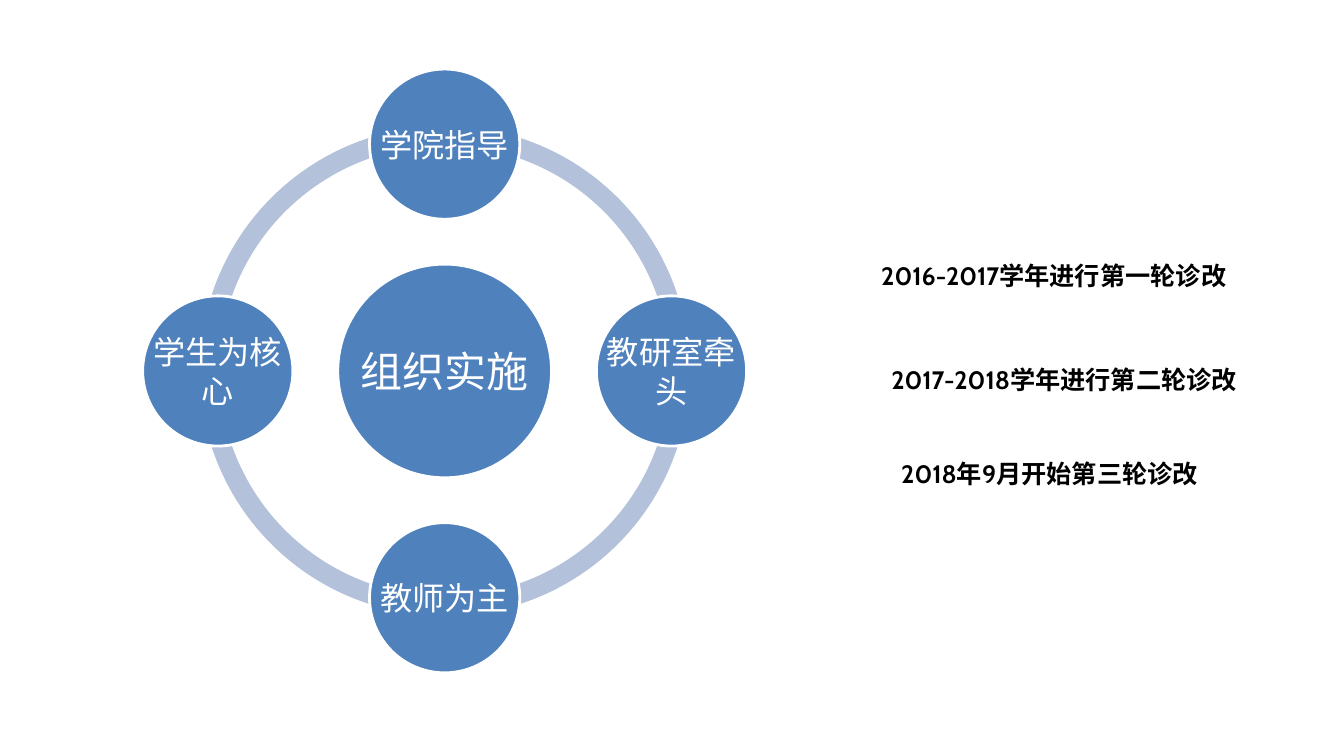
"""Builds a slide with a four-part organisation cycle and three review rounds."""
import math
from dataclasses import dataclass

from lxml import etree
from pptx import Presentation
from pptx.dml.color import RGBColor
from pptx.enum.shapes import MSO_SHAPE
from pptx.enum.text import MSO_ANCHOR, MSO_AUTO_SIZE, PP_ALIGN
from pptx.oxml.ns import qn
from pptx.util import Inches, Pt

ARC, OVAL = MSO_SHAPE.BLOCK_ARC, MSO_SHAPE.OVAL
TOP, MIDDLE = MSO_ANCHOR.TOP, MSO_ANCHOR.MIDDLE
LEFT, CENTER, JUSTIFY = PP_ALIGN.LEFT, PP_ALIGN.CENTER, PP_ALIGN.JUSTIFY
NO_FIT, GROW = MSO_AUTO_SIZE.NONE, MSO_AUTO_SIZE.SHAPE_TO_FIT_TEXT

CENTER_X, CENTER_Y = 4.41, 3.68
RING_SIZE, RING_THICKNESS = 4.86, 0.04
ORBIT_RADIUS = 2.25
HUB_SIZE, NODE_SIZE = 2.12, 1.49
NODES = ["学院指导", "教研室牵头", "教师为主", "学生为核心"]


@dataclass(frozen=True)
class Theme:
    """Colours, fonts and type sizes of the slide."""
    disc: RGBColor = RGBColor(0x4F, 0x81, 0xBD)
    ring: RGBColor = RGBColor(0xB3, 0xC1, 0xDB)
    white: RGBColor = RGBColor(0xFF, 0xFF, 0xFF)
    black: RGBColor = RGBColor(0, 0, 0)
    disc_font: str = "Calibri"
    latin_font: str = "Cabin"
    chinese_font: str = "Noto Sans CJK SC"
    hub_size: int = 30
    node_size: int = 23
    round_size: int = 18
    round_spacing: float = 23.8


def write_text(shape, runs, *, size, color, bold=False, align=LEFT, anchor=TOP,
               inset=(0, 0), spacing=None, fit=NO_FIT):
    """Write (text, font) runs into the shape as one formatted paragraph."""
    frame = shape.text_frame
    frame.word_wrap = True
    frame.auto_size = fit
    frame.vertical_anchor = anchor
    frame.margin_left = frame.margin_right = Inches(inset[0])
    frame.margin_top = frame.margin_bottom = Inches(inset[1])
    paragraph = frame.paragraphs[0]
    paragraph.alignment = align
    if spacing:
        paragraph.line_spacing = Pt(spacing)
    for text, font_name in runs:
        run = paragraph.add_run()
        run.text = text
        run.font.size = Pt(size)
        run.font.bold = bold
        run.font.color.rgb = color
        run.font.name = font_name
        east_asian = etree.Element(qn("a:ea"), typeface=font_name)
        run.font._element.find(qn("a:latin")).addnext(east_asian)


class SlideBuilder:
    """Draws the elements of the current slide in one theme."""

    def __init__(self, slide, theme):
        """Keep the slide and its theme."""
        self.slide = slide
        self.theme = theme

    def centered_shape(self, kind, x, y, size, fill):
        """Add a filled square-framed shape centred on a point."""
        shape = self.slide.shapes.add_shape(
            kind, Inches(x - size / 2), Inches(y - size / 2), Inches(size), Inches(size))
        shape.shadow.inherit = False
        shape.fill.solid()
        shape.fill.fore_color.rgb = fill
        return shape

    def ring_quarter(self, start, end):
        """Add the part of the ring between two angles in degrees."""
        arc = self.centered_shape(ARC, CENTER_X, CENTER_Y, RING_SIZE, self.theme.ring)
        arc.line.fill.background()
        arc.adjustments[0] = start * 0.6
        arc.adjustments[1] = end * 0.6
        arc.adjustments[2] = RING_THICKNESS

    def disc(self, x, y, diameter, text, size, inset):
        """Add a disc with a label that spans its full width."""
        shape = self.centered_shape(OVAL, x, y, diameter, self.theme.disc)
        shape.line.color.rgb = self.theme.white
        shape.line.width = Pt(2)
        label = self.slide.shapes.add_textbox(shape.left, shape.top, shape.width, shape.height)
        write_text(label, [(text, self.theme.disc_font)], size=size, color=self.theme.white,
                   align=CENTER, anchor=MIDDLE, inset=(inset, inset))

    def review_round(self, left, top, width, height, runs, align=LEFT, inset=(0, 0)):
        """Add one bold line about a review round."""
        box = self.slide.shapes.add_textbox(
            Inches(left), Inches(top), Inches(width), Inches(height))
        write_text(box, runs, size=self.theme.round_size, color=self.theme.black, bold=True,
                   align=align, inset=inset, spacing=self.theme.round_spacing, fit=GROW)


def main():
    """Build and save the presentation."""
    presentation = Presentation()
    presentation.slide_width = Inches(13.33)
    presentation.slide_height = Inches(7.5)
    theme = Theme()
    builder = SlideBuilder(
        presentation.slides.add_slide(presentation.slide_layouts[6]), theme)

    for start in (270, 0, 90, 180):
        builder.ring_quarter(start, (start + 90) % 360)

    builder.disc(CENTER_X, CENTER_Y, HUB_SIZE, "组织实施", theme.hub_size, 0.04)
    for index, name in enumerate(NODES):
        angle = math.tau * index / len(NODES)
        builder.disc(CENTER_X + ORBIT_RADIUS * math.sin(angle),
                     CENTER_Y - ORBIT_RADIUS * math.cos(angle),
                     NODE_SIZE, name, theme.node_size, 0.03)

    for left, top, years, text in ((8.74, 2.55, "2016-2017", "学年进行第一轮诊改"),
                                   (8.84, 3.58, "2017-2018", "学年进行第二轮诊改")):
        builder.review_round(left, top, 3.95, 0.33,
                             [(years, theme.latin_font), (text, theme.chinese_font)])
    builder.review_round(8.84, 4.47, 3.49, 0.43,
                         [("2018年9月开始第三轮诊改", theme.latin_font)],
                         align=JUSTIFY, inset=(0.1, 0.05))

    presentation.save("out.pptx")


if __name__ == "__main__":
    main()
